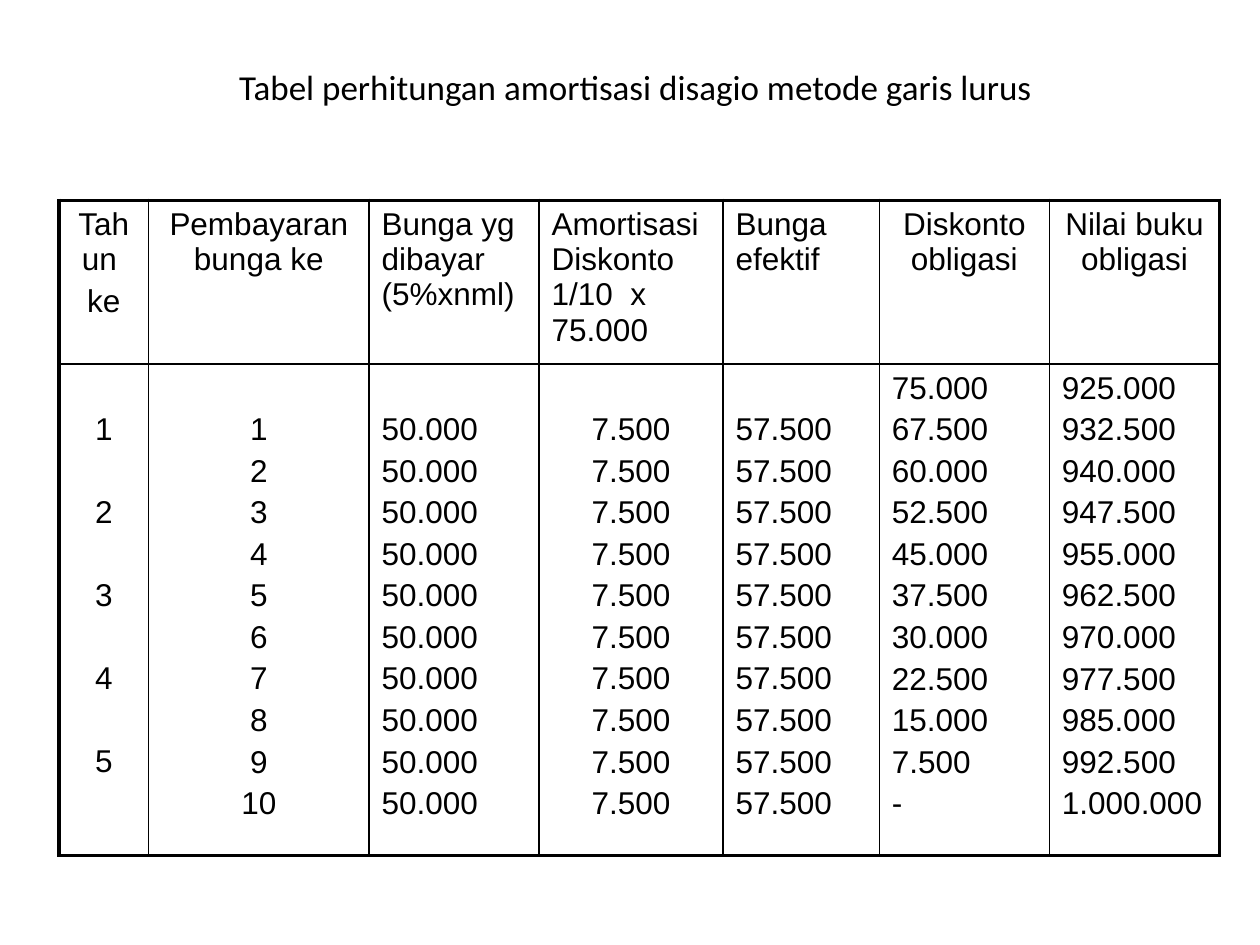
from lxml.etree import SubElement
from pptx import Presentation
from pptx.dml.color import RGBColor
from pptx.enum.text import PP_ALIGN as Align
from pptx.oxml.ns import qn
from pptx.util import Pt

BLACK = "000000"
THIN, THICK = 1, 2.25
INSET = 3.6
LINE_GAP = 3.6
LINE_PITCH = 23.7
PERIODS = range(1, 11)
PAYMENT, AMORTISATION, DISCOUNT, NOMINAL = 50000, 7500, 75000, 1000000


def color(hex_string):
    """Turn a hex string into a colour."""
    return RGBColor.from_string(hex_string)


def amount(value):
    """Write a number with dots between thousands, and a dash for zero."""
    return f"{value:,}".replace(",", ".") if value else "-"


def write(frame, text, size=18, font="Arial", align=Align.LEFT, gap=LINE_GAP):
    """Fill a text frame with one paragraph for each line of text."""
    frame.word_wrap = True
    for index, line in enumerate(text.split("\n")):
        paragraph = frame.paragraphs[0] if index == 0 else frame.add_paragraph()
        paragraph.alignment = align
        paragraph.space_before = Pt(gap)
        run = paragraph.add_run()
        run.text = line
        run.font.size = Pt(size)
        run.font.name = font
        run.font.color.rgb = color(BLACK)


def set_borders(cell, **widths):
    """Draw the cell borders, given a width in points for each side."""
    properties = cell._tc.get_or_add_tcPr()
    for side in ("L", "R", "T", "B"):
        line = SubElement(properties, qn(f"a:ln{side}"), w=str(Pt(widths[side])))
        fill = SubElement(line, qn("a:solidFill"))
        SubElement(fill, qn("a:srgbClr"), val=BLACK)


def add_title(slide, left, top, width, height):
    """Place the title line."""
    title = slide.shapes.add_textbox(Pt(left), Pt(top), Pt(width), Pt(height))
    write(title.text_frame, "Tabel perhitungan amortisasi disagio metode garis lurus",
          size=20, font="Calibri", align=Align.CENTER)


def schedule_columns():
    """List width, heading, heading alignment, values, alignment and first line."""
    left, center = Align.LEFT, Align.CENTER
    count = len(PERIODS)
    discounts = [DISCOUNT - AMORTISATION * period for period in range(count + 1)]
    book_values = [NOMINAL - discount for discount in discounts]
    return [
        (51.1, "Tahun \nke", center, [str(year) for year in range(1, 6)], center, 1),
        (126, "Pembayaran bunga ke", center, [str(period) for period in PERIODS], center, 1),
        (97.2, "Bunga yg dibayar (5%xnml)", left, [amount(PAYMENT)] * count, left, 1),
        (105.1, "Amortisasi Diskonto 1/10  x 75.000", left,
         [amount(AMORTISATION)] * count, center, 1),
        (89.3, "Bunga efektif", left, [amount(PAYMENT + AMORTISATION)] * count, left, 1),
        (97.2, "Diskonto obligasi", center, [amount(value) for value in discounts], left, 0),
        (97.2, "Nilai buku obligasi", center, [amount(value) for value in book_values], left, 0),
    ]


def add_schedule(slide, left, top, width, header_height, body_height):
    """Place the amortisation table."""
    columns = schedule_columns()
    last = len(columns) - 1
    table = slide.shapes.add_table(2, len(columns), Pt(left), Pt(top), Pt(width),
                                   Pt(header_height + body_height)).table
    table.first_row = table.horz_banding = False
    table.rows[0].height, table.rows[1].height = Pt(header_height), Pt(body_height)
    for index, column in enumerate(columns):
        column_width, heading, heading_align, values, align, first_line = column
        table.columns[index].width = Pt(column_width)
        header, body = table.cell(0, index), table.cell(1, index)
        write(header.text_frame, heading, align=heading_align)
        is_year = index == 0
        write(body.text_frame, "\n".join(values), align=align,
              gap=LINE_GAP + (LINE_PITCH if is_year else 0))
        body.margin_top = Pt(INSET + first_line * LINE_PITCH)
        for cell, above, below in ((header, THICK, THIN), (body, THIN, THICK)):
            set_borders(cell, L=THICK if is_year else THIN,
                        R=THICK if index == last else THIN, T=above, B=below)
            cell.fill.background()


def main():
    """Build the slide and save it."""
    deck = Presentation()
    deck.slide_width, deck.slide_height = Pt(720), Pt(540)
    slide = deck.slides.add_slide(deck.slide_layouts[6])
    add_title(slide, 33.8, 33.8, 658.8, 33.8)
    add_schedule(slide, 33.8, 114.5, 663.1, 87.6, 264.6)
    deck.save("out.pptx")


if __name__ == "__main__":
    main()
